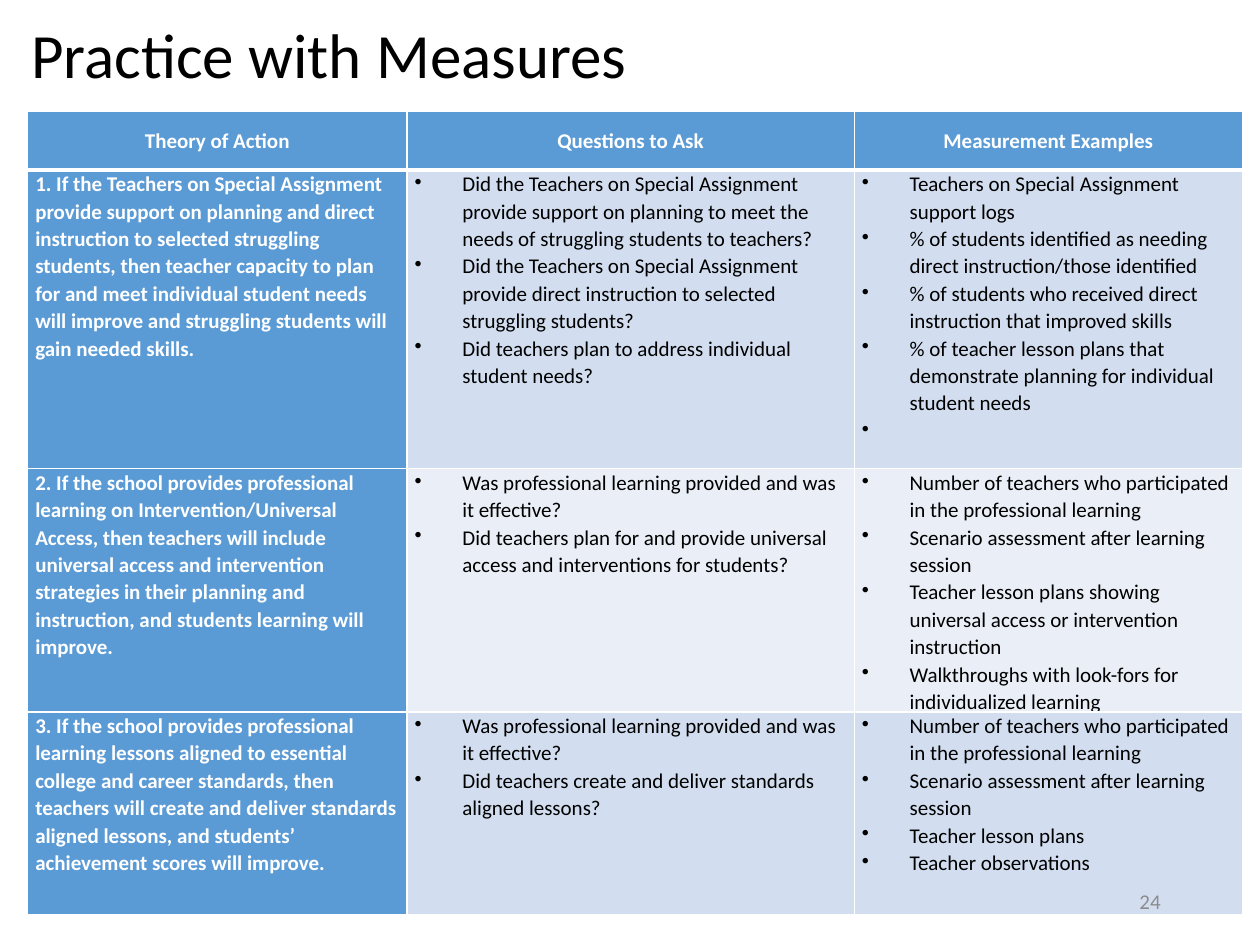
from lxml.etree import SubElement
from pptx import Presentation
from pptx.dml.color import RGBColor
from pptx.enum.text import MSO_ANCHOR, PP_ALIGN
from pptx.oxml import parse_xml
from pptx.oxml.ns import nsdecls, qn
from pptx.util import Inches, Pt

COLORS = {
    "white": "FFFFFF",
    "black": "000000",
    "gray": "8C8C8C",
    "blue": "5B9BD5",
    "band_dark": "D2DEEF",
    "band_light": "EAEFF7",
}

HEADINGS = ["Theory of Action", "Questions to Ask", "Measurement Examples"]
LEARNING_QUESTION = "Was professional learning provided and was it effective?"
LEARNING_MEASURES = [
    "Number of teachers who participated in the professional learning",
    "Scenario assessment after learning session",
]
THEORIES = [
    (
        "1. If the Teachers on Special Assignment provide support on planning and direct "
        "instruction to selected struggling students, then teacher capacity to plan for and "
        "meet individual student needs will improve and struggling students will gain needed skills.",
        [
            "Did the Teachers on Special Assignment provide support on planning to meet the "
            "needs of struggling students to teachers?",
            "Did the Teachers on Special Assignment provide direct instruction to selected "
            "struggling students?",
            "Did teachers plan to address individual student needs?",
        ],
        [
            "Teachers on Special Assignment support logs",
            "% of students identified as needing direct instruction/those identified",
            "% of students who received direct instruction that improved skills",
            "% of teacher lesson plans that demonstrate planning for individual student needs",
            " ",
        ],
    ),
    (
        "2. If the school provides professional learning on Intervention/Universal Access, then "
        "teachers will include universal access and intervention strategies in their planning "
        "and instruction, and students learning will improve.",
        [
            LEARNING_QUESTION,
            "Did teachers plan for and provide universal access and interventions for students?",
        ],
        LEARNING_MEASURES + [
            "Teacher lesson plans showing universal access or intervention instruction",
            "Walkthroughs with look-fors for individualized learning",
        ],
    ),
    (
        "3. If the school provides professional learning lessons aligned to essential college "
        "and career standards, then teachers will create and deliver standards aligned lessons, "
        "and students’ achievement scores will improve.",
        [
            LEARNING_QUESTION,
            "Did teachers create and deliver standards aligned lessons?",
        ],
        LEARNING_MEASURES + ["Teacher lesson plans", "Teacher observations"],
    ),
]


def write_text(frame, lines, size=12, color="black", bold=False, align=PP_ALIGN.LEFT,
               line_spacing=1.0, space=0, bullet=None):
    frame.word_wrap = True
    for index, line in enumerate(lines):
        paragraph = frame.add_paragraph() if index else frame.paragraphs[0]
        paragraph.alignment = align
        paragraph.line_spacing = line_spacing
        paragraph.space_before = paragraph.space_after = Pt(space)
        run = paragraph.add_run()
        run.text = line
        run.font.name = "Calibri"
        run.font.size = Pt(size)
        run.font.bold = bold
        run.font.color.rgb = RGBColor.from_string(COLORS[color])
        if bullet:
            properties = paragraph._p.get_or_add_pPr()
            properties.set("marL", str(Inches(0.38)))
            properties.set("indent", str(Inches(-0.38)))
            SubElement(properties, qn("a:buChar")).set("char", bullet)


class SlideBuilder:
    line_spacing = 1.07
    border_color = "white"

    def __init__(self, slide):
        self.slide = slide

    def text(self, line, left, top, width, height, **style):
        box = self.slide.shapes.add_textbox(
            Inches(left), Inches(top), Inches(width), Inches(height))
        box.text_frame.vertical_anchor = MSO_ANCHOR.MIDDLE
        write_text(box.text_frame, [line], **style)

    def table(self, left, top, widths, heights):
        table = self.slide.shapes.add_table(
            len(heights), len(widths), Inches(left), Inches(top),
            Inches(sum(widths)), Inches(sum(heights))).table
        table.first_row = table.horz_banding = False
        for column, width in zip(table.columns, widths):
            column.width = Inches(width)
        for row, height in zip(table.rows, heights):
            row.height = Inches(height)
        return table

    def cell(self, cell, lines, fill, anchor=MSO_ANCHOR.TOP, top=1, bottom=1, **style):
        cell.margin_left = cell.margin_right = Inches(0.06)
        cell.margin_top = cell.margin_bottom = 0
        cell.vertical_anchor = anchor
        cell.fill.solid()
        cell.fill.fore_color.rgb = RGBColor.from_string(COLORS[fill])
        self.borders(cell, L=1, R=1, T=top, B=bottom)
        write_text(cell.text_frame, lines, line_spacing=self.line_spacing, **style)

    def borders(self, cell, **weights):
        properties = cell._tc.get_or_add_tcPr()
        for index, (side, weight) in enumerate(weights.items()):
            properties.insert(index, parse_xml(
                f'<a:ln{side} {nsdecls("a")} w="{Pt(weight)}"><a:solidFill>'
                f'<a:srgbClr val="{COLORS[self.border_color]}"/></a:solidFill></a:ln{side}>'))


def main():
    presentation = Presentation()
    presentation.slide_width = Inches(10)
    presentation.slide_height = Inches(7.5)
    builder = SlideBuilder(presentation.slides.add_slide(presentation.slide_layouts[6]))

    builder.text("Practice with Measures", 0.15, 0.11, 5.61, 0.7, size=36, line_spacing=0.9)

    measures = builder.table(0.22, 0.88, [3.01, 3.55, 3.08], [0.47, 2.37, 1.93, 1.61])
    for column, heading in enumerate(HEADINGS):
        builder.cell(measures.cell(0, column), [heading], "blue", anchor=MSO_ANCHOR.MIDDLE,
                     bottom=3, color="white", bold=True, align=PP_ALIGN.CENTER)
    for row, (theory, *bullet_lists) in enumerate(THEORIES, start=1):
        top = 3 if row == 1 else 1
        band = "band_dark" if row % 2 else "band_light"
        builder.cell(measures.cell(row, 0), [theory], "blue", top=top,
                     color="white", bold=True, space=3)
        for column, bullets in enumerate(bullet_lists, start=1):
            builder.cell(measures.cell(row, column), bullets, band, top=top, bullet="•")

    builder.text("24", 7.06, 6.95, 2.25, 0.4, color="gray", align=PP_ALIGN.RIGHT)
    presentation.save("out.pptx")


if __name__ == "__main__":
    main()
